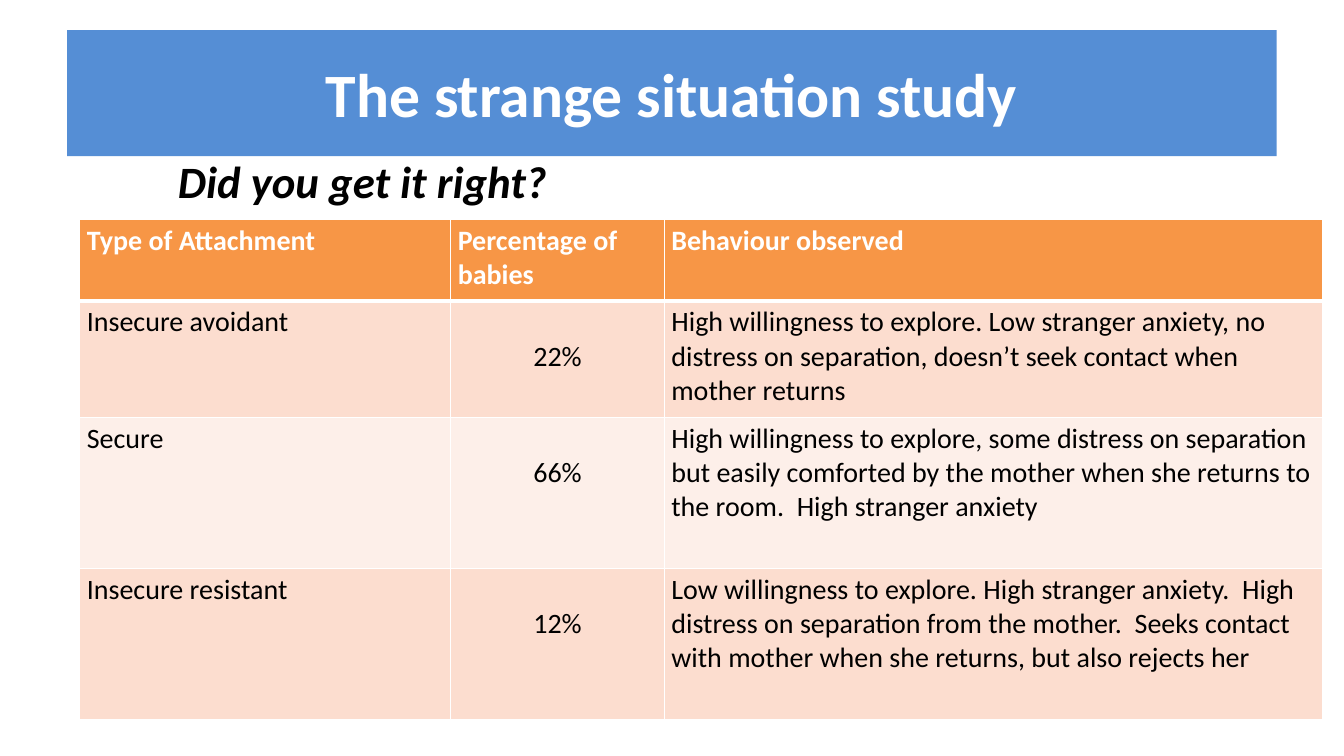
from lxml.etree import SubElement
from pptx import Presentation
from pptx.dml.color import RGBColor
from pptx.enum.shapes import MSO_SHAPE
from pptx.enum.text import MSO_ANCHOR, PP_ALIGN
from pptx.oxml.ns import qn
from pptx.util import Pt

WHITE = RGBColor(0xFF, 0xFF, 0xFF)
BLACK = RGBColor(0, 0, 0)
BLUE = RGBColor(0x55, 0x8E, 0xD5)
ORANGE = RGBColor(0xF7, 0x96, 0x46)
PEACH = RGBColor(0xFC, 0xDD, 0xCF)
PALE_PEACH = RGBColor(0xFD, 0xEF, 0xE9)

COLUMN_WIDTHS = [265, 152.6, 470.4]
ROW_HEIGHTS = [58, 83, 108, 108]
LINE_HEIGHT = 24.4
ROWS = [
    ("Type of Attachment", "Percentage of babies", "Behaviour observed"),
    ("Insecure avoidant", "22%",
     "High willingness to explore. Low stranger anxiety, no distress on "
     "separation, doesn’t seek contact when mother returns"),
    ("Secure", "66%",
     "High willingness to explore, some distress on separation but easily "
     "comforted by the mother when she returns to the room.  High stranger anxiety"),
    ("Insecure resistant", "12%",
     "Low willingness to explore. High stranger anxiety.  High distress on "
     "separation from the mother.  Seeks contact with mother when she returns, "
     "but also rejects her"),
]


def write(tf, text, color, align=PP_ALIGN.LEFT, **font):
    """Put one formatted run into the first paragraph of a text frame."""
    p = tf.paragraphs[0]
    p.alignment = align
    r = p.add_run()
    r.text = text
    r.font.color.rgb = color
    for name, value in {"name": "Calibri", **font}.items():
        setattr(r.font, name, value)


def add_borders(cell, widths):
    """Draw white cell borders; widths maps each side (L, R, T, B) to points."""
    tc_pr = cell._tc.get_or_add_tcPr()
    for side, width in widths.items():
        ln = SubElement(tc_pr, qn(f"a:ln{side}"), w=str(Pt(width)))
        fill = SubElement(ln, qn("a:solidFill"))
        SubElement(fill, qn("a:srgbClr"), val=str(WHITE))


prs = Presentation()
prs.slide_width, prs.slide_height = Pt(960), Pt(540)
s = prs.slides.add_slide(prs.slide_layouts[6])

question = s.shapes.add_textbox(Pt(120), Pt(106), Pt(648), Pt(46))
question.text_frame.word_wrap = True
write(question.text_frame, "Did you get it right?", BLACK,
      size=Pt(32), bold=True, italic=True)

title = s.shapes.add_shape(MSO_SHAPE.RECTANGLE, Pt(48), Pt(21.6), Pt(864), Pt(90))
title.shadow.inherit = False
title.fill.solid()
title.fill.fore_color.rgb = BLUE
title.line.fill.background()
title.text_frame.vertical_anchor = MSO_ANCHOR.MIDDLE
write(title.text_frame, "The strange situation study", WHITE, PP_ALIGN.CENTER,
      size=Pt(44), bold=True)

table = s.shapes.add_table(len(ROWS), len(COLUMN_WIDTHS), Pt(57), Pt(157),
                           Pt(sum(COLUMN_WIDTHS)), Pt(sum(ROW_HEIGHTS))).table
for column, width in zip(table.columns, COLUMN_WIDTHS):
    column.width = Pt(width)
for row, height in zip(table.rows, ROW_HEIGHTS):
    row.height = Pt(height)

for i, texts in enumerate(ROWS):
    is_header = i == 0
    row_fill = ORANGE if is_header else PEACH if i % 2 else PALE_PEACH
    for j, text in enumerate(texts):
        is_percentage = j == 1 and not is_header
        cell = table.cell(i, j)
        add_borders(cell, {"L": 1, "R": 1, "T": 3 if i == 1 else 1,
                           "B": 3 if is_header else 1})
        cell.fill.solid()
        cell.fill.fore_color.rgb = row_fill
        cell.margin_left = cell.margin_right = Pt(5)
        cell.margin_bottom = Pt(3)
        cell.margin_top = Pt(3 + LINE_HEIGHT * is_percentage)
        write(cell.text_frame, text, WHITE if is_header else BLACK,
              PP_ALIGN.CENTER if is_percentage else PP_ALIGN.LEFT,
              size=Pt(20), bold=is_header)

prs.save("out.pptx")
